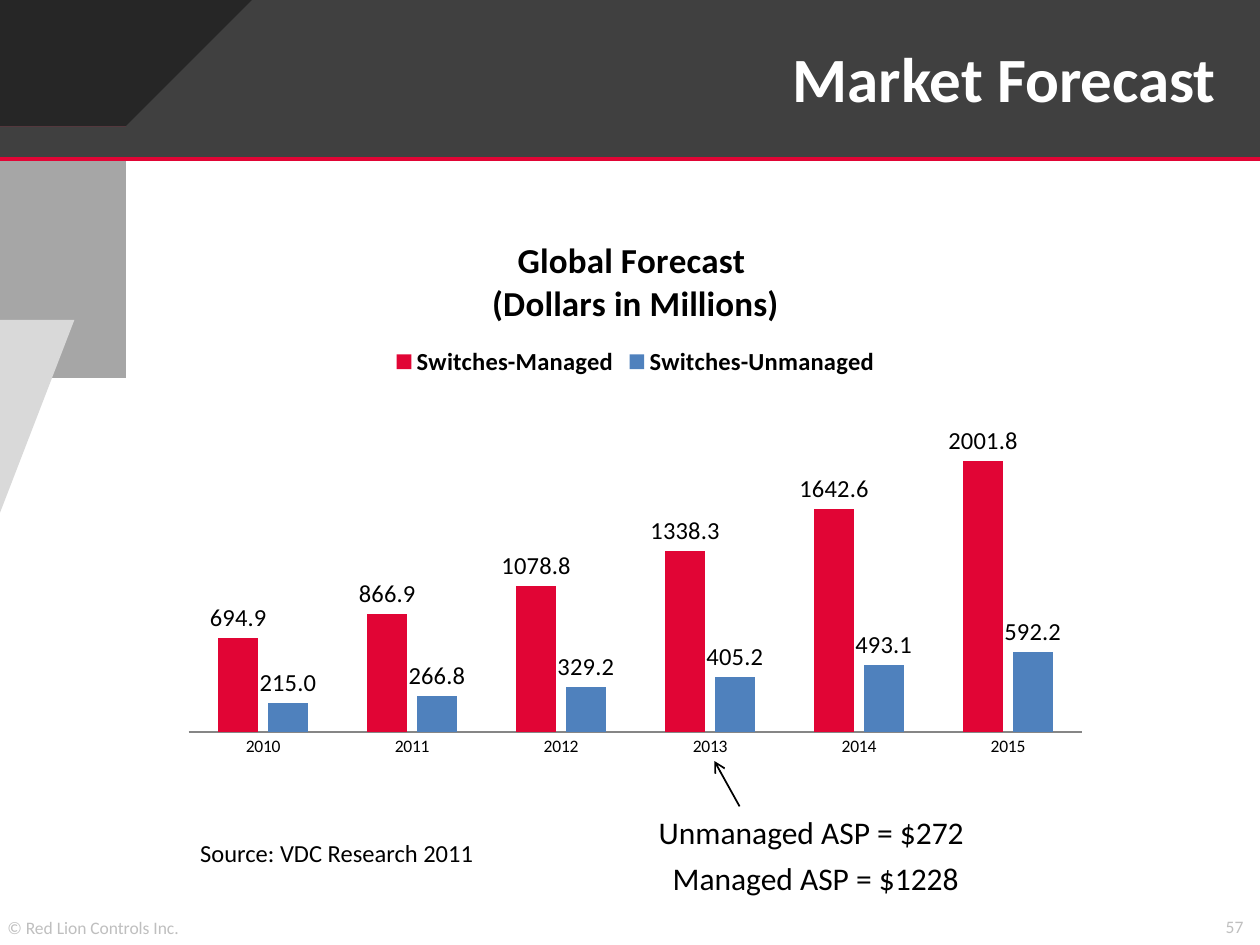
"""Build the market forecast slide with a clustered column chart."""
from lxml.etree import SubElement
from pptx import Presentation
from pptx.chart.data import CategoryChartData
from pptx.dml.color import RGBColor
from pptx.enum.chart import XL_CHART_TYPE, XL_LABEL_POSITION, XL_LEGEND_POSITION, XL_TICK_LABEL_POSITION, XL_TICK_MARK
from pptx.enum.shapes import MSO_CONNECTOR, MSO_SHAPE
from pptx.enum.text import MSO_ANCHOR, PP_ALIGN
from pptx.oxml import parse_xml
from pptx.oxml.ns import nsdecls, qn
from pptx.util import Inches, Pt

BLACK = RGBColor(0, 0, 0)
WHITE = RGBColor(255, 255, 255)
RED = RGBColor(0xE1, 0x05, 0x35)
BLUE = RGBColor(0x4F, 0x81, 0xBD)
DARK = RGBColor(0x26, 0x26, 0x26)
SLATE = RGBColor(0x40, 0x40, 0x40)
GRAY = RGBColor(0xA6, 0xA6, 0xA6)
PALE = RGBColor(0xD9, 0xD9, 0xD9)
MUTED = RGBColor(0xBF, 0xBF, 0xBF)
AXIS = RGBColor(0x86, 0x86, 0x86)
FONT = "Calibri"
WIDE, HIGH = 10, 7.5
BAND, STEP = 1.25, 2.54

TITLE = "Market Forecast"
HEADING = "Global Forecast \n(Dollars in Millions)"
YEARS = ["2010", "2011", "2012", "2013", "2014", "2015"]
SERIES = [
    ("Switches-Managed", RED, [694.9, 866.9, 1078.8, 1338.3, 1642.6, 2001.8]),
    ("Switches-Unmanaged", BLUE, [215, 266.8, 329.2, 405.2, 493.1, 592.2]),
]
NOTES = [
    ("57", (9.63, 7.22, 0.37, 0.27), 10, MUTED),
    ("© Red Lion Controls Inc.", (-0.04, 7.23, 1.59, 0.27), 10, MUTED),
    ("Source: VDC Research 2011", (1.49, 6.6, 3.64, 0.34), 14, BLACK),
    ("Managed ASP = $1228", (5.24, 6.77, 2.87, 0.4), 18, BLACK),
    ("Unmanaged ASP = $272", (5.13, 6.4, 2.87, 0.4), 18, BLACK),
]
PLOT = {"x": 0.02, "y": 0.32, "w": 0.96, "h": 0.61}


def style(font, size, color=BLACK, bold=False):
    font.name, font.size, font.bold = FONT, Pt(size), bold
    font.color.rgb = color


def paint(shape, color):
    shape.shadow.inherit = False
    shape.fill.solid()
    shape.fill.fore_color.rgb = color
    shape.line.fill.background()


def block(slide, kind, box, color):
    shape = slide.shapes.add_shape(kind, *map(Inches, box))
    paint(shape, color)
    return shape


def slant(slide, points, color):
    pen = slide.shapes.build_freeform(*points[0], scale=Inches(1))
    pen.add_line_segments(points[1:], close=True)
    paint(pen.convert_to_shape(), color)


def rule(slide, start, end, color, width):
    ends = map(Inches, (*start, *end))
    line = slide.shapes.add_connector(MSO_CONNECTOR.STRAIGHT, *ends)
    line.line.color.rgb = color
    line.line.width = Pt(width)
    SubElement(line._element.spPr, qn("a:effectLst"))
    return line


def write(slide, text, box, size, color, bold=False):
    frame = slide.shapes.add_textbox(*map(Inches, box)).text_frame
    frame.word_wrap = size > 10
    frame.text = text
    style(frame.paragraphs[0].runs[0].font, size, color, bold)
    return frame


def draw_frame(slide):
    slant(slide, [(0, STEP), (0.59, STEP), (1.07, 1.29), (0, 1.29)], GRAY)
    block(slide, MSO_SHAPE.RECTANGLE, (0, 0, WIDE, BAND), SLATE)
    rule(slide, (WIDE, 1.26), (0, 1.26), RED, 2.5)
    wedge = block(slide, MSO_SHAPE.RIGHT_TRIANGLE, (0, STEP, 0.59, 1.53), PALE)
    wedge._element.spPr.find(qn("a:xfrm")).set("flipV", "1")
    slant(slide, [(0, BAND), (1.08, BAND), (1.57, 0), (0, 0)], DARK)
    slant(slide, [(0, 1.24), (1.09, BAND), (1.05, 1.36), (0, 1.36)], RED)


def place_plot(chart):
    area = chart._chartSpace.chart.plotArea
    for old in area.findall(qn("c:layout")):
        area.remove(old)
    modes = '<c:layoutTarget val="inner"/><c:xMode val="edge"/><c:yMode val="edge"/>'
    sizes = "".join(f'<c:{key} val="{val}"/>' for key, val in PLOT.items())
    area.insert(0, parse_xml(
        f'<c:layout {nsdecls("c")}><c:manualLayout>{modes}{sizes}</c:manualLayout></c:layout>'))


def draw_chart(slide):
    data = CategoryChartData(number_format="0.0")
    data.categories = YEARS
    for name, color, vals in SERIES:
        data.add_series(name, vals)
    box = map(Inches, (1.35, 1.71, 7.39, 4.41))
    chart = slide.shapes.add_chart(XL_CHART_TYPE.COLUMN_CLUSTERED, *box, data).chart
    style(chart.font, 10)
    chart.has_title = True
    head = chart.chart_title.text_frame
    head.text = HEADING
    for para in head.paragraphs:
        style(para.runs[0].font, 20, bold=True)
    chart.has_legend = True
    chart.legend.position = XL_LEGEND_POSITION.TOP
    chart.legend.include_in_layout = False
    style(chart.legend.font, 14, bold=True)
    axis = chart.category_axis
    axis.major_tick_mark = XL_TICK_MARK.NONE
    axis.tick_label_position = XL_TICK_LABEL_POSITION.NEXT_TO_AXIS
    axis.format.line.color.rgb = AXIS
    scale = chart.value_axis
    scale.visible = scale.has_major_gridlines = False
    scale.minimum_scale, scale.maximum_scale = 0, 2500
    plot = chart.plots[0]
    plot.gap_width, plot.overlap = 150, -25
    plot.vary_by_categories = False
    for bars, (name, color, vals) in zip(plot.series, SERIES):
        bars.format.fill.solid()
        bars.format.fill.fore_color.rgb = color
        tags = bars.data_labels
        tags.show_value = True
        tags.position = XL_LABEL_POSITION.OUTSIDE_END
        style(tags.font, 14)
    place_plot(chart)


def main():
    deck = Presentation()
    deck.slide_width, deck.slide_height = Inches(WIDE), Inches(HIGH)
    slide = deck.slides.add_slide(deck.slide_layouts[6])
    draw_frame(slide)
    draw_chart(slide)
    for note in NOTES:
        write(slide, *note)
    title = write(slide, TITLE, (1.25, 0.24, 8.5, 0.75), 36, WHITE, True)
    title.vertical_anchor = MSO_ANCHOR.MIDDLE
    title.paragraphs[0].alignment = PP_ALIGN.RIGHT
    arrow = rule(slide, (5.87, 6.4), (5.67, 6.04), BLACK, 1)
    SubElement(arrow.line._get_or_add_ln(), qn("a:tailEnd"), type="arrow")
    deck.save("out.pptx")


if __name__ == "__main__":
    main()
